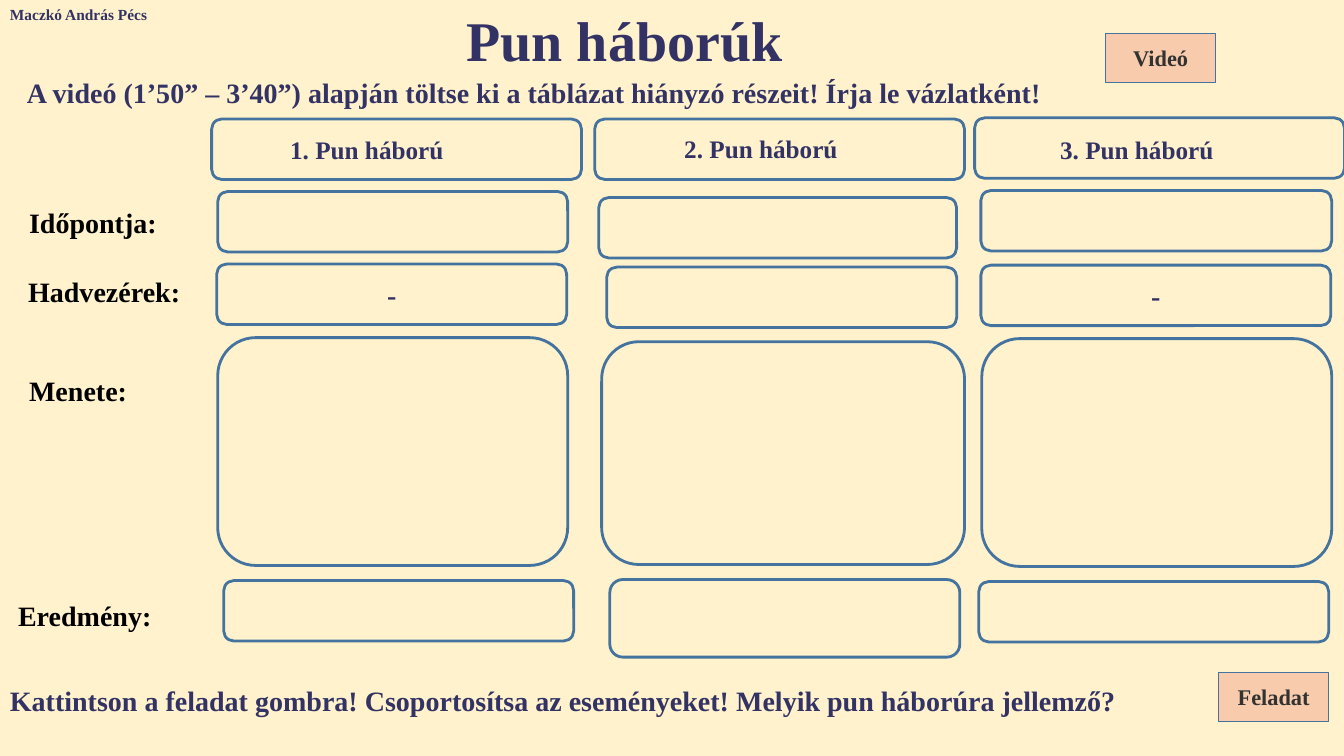
from pptx import Presentation
from pptx.dml.color import RGBColor
from pptx.enum import shapes, text
from pptx.util import Pt

FONT = "Times New Roman"
CREAM = RGBColor(0xFF, 0xF2, 0xCC)
PEACH = RGBColor(0xF8, 0xCB, 0xAD)
BLUE = RGBColor(0x43, 0x73, 0x9E)
NAVY = RGBColor(0x32, 0x32, 0x64)
CHARCOAL = RGBColor(0x32, 0x32, 0x32)
BLACK = RGBColor(0, 0, 0)

# Row labels: text, left, top
ROW_LABELS = [
    ("Időpontja:", 13.7, 143.3),
    ("Hadvezérek:", 13, 192.2),
    ("Menete:", 13.7, 263.5),
    ("Eredmény:", 5.8, 424.1),
]

# Wars: column origin, heading offset, then cells (left, top, width, height,
# text) for date, commanders, course and result, relative to the column
WARS = [
    ((151.2, 85), (49, 7.2), [
        (4.3, 51.8, 250, 43.2, ""), (3.6, 103.6, 250, 43.2, "-"),
        (4.3, 156.2, 250, 162.7, ""), (8.6, 329.7, 250, 43.2, "")]),
    ((424.8, 85), (56.9, 6.4), [
        (2.9, 56.1, 255.6, 43.2, ""), (8.6, 105.8, 250, 43.2, ""),
        (5, 159.1, 259.2, 159.1, ""), (10.8, 329, 250, 55.4, "")]),
    ((696.2, 84.2), (54, 8), [
        (4.4, 51.9, 250.6, 43.2, ""), (4.4, 105.2, 250, 43.2, "-"),
        (5.1, 157.7, 250, 162.7, ""), (2.9, 331.2, 250, 43.2, "")]),
]


def write(shape, wording, size, color, align=text.PP_ALIGN.LEFT,
          anchor=text.MSO_ANCHOR.TOP, wrap=True):
    frame = shape.text_frame
    frame.word_wrap = wrap
    frame.auto_size = text.MSO_AUTO_SIZE.NONE
    frame.vertical_anchor = anchor
    paragraph = frame.paragraphs[0]
    paragraph.text = wording
    paragraph.alignment = align
    paragraph.font.name = FONT
    paragraph.font.size = Pt(size)
    paragraph.font.bold = True
    paragraph.font.color.rgb = color


def add_text(slide, box, wording, size, color=NAVY, wrap=True):
    shape = slide.shapes.add_textbox(*map(Pt, box))
    write(shape, wording, size, color, wrap=wrap)


def add_box(slide, kind, box, fill, line_width, wording="", size=20, color=NAVY):
    shape = slide.shapes.add_shape(kind, *map(Pt, box))
    shape.shadow.inherit = False
    shape.fill.solid()
    shape.fill.fore_color.rgb = fill
    shape.line.color.rgb = BLUE
    shape.line.width = Pt(line_width)
    if wording:
        write(shape, wording, size, color, text.PP_ALIGN.CENTER,
              text.MSO_ANCHOR.MIDDLE)


def add_title(slide, box):
    title = slide.shapes.title
    title.left, title.top, title.width, title.height = map(Pt, box)
    write(title, "Pun háborúk", 40, NAVY, text.PP_ALIGN.CENTER)


def add_war(slide, number, origin, heading_offset, cells):
    left, top = origin
    rounded = shapes.MSO_SHAPE.ROUNDED_RECTANGLE
    add_box(slide, rounded, (left, top, 264.2, 43.2), CREAM, 2)
    heading_left, heading_top = heading_offset
    add_text(slide, (left + heading_left, top + heading_top, 125.3, 28.8),
             f"{number}. Pun háború", 18, wrap=False)
    for cell_left, cell_top, width, height, wording in cells:
        add_box(slide, rounded, (left + cell_left, top + cell_top, width, height),
                CREAM, 2, wording)


def add_button(slide, left, top, wording):
    add_box(slide, shapes.MSO_SHAPE.RECTANGLE, (left, top, 78.5, 35.3),
            PEACH, 1, wording, 16, CHARCOAL)


def build_worksheet(presentation):
    slide = presentation.slides.add_slide(presentation.slide_layouts[5])
    slide.background.fill.solid()
    slide.background.fill.fore_color.rgb = CREAM

    # Heading, author and instruction
    add_title(slide, (130.3, 0, 631.4, 55.4))
    add_text(slide, (0, 0, 114.5, 20.9), "Maczkó András Pécs", 11)
    add_text(slide, (12.2, 50.4, 769, 31.7),
             "A videó (1’50” – 3’40”) alapján töltse ki a táblázat hiányzó "
             "részeit! Írja le vázlatként!", 20, wrap=False)

    # Table of the three wars
    for wording, left, top in ROW_LABELS:
        add_text(slide, (left, top, 126.7, 31.7), wording, 20, BLACK)
    for number, (origin, heading_offset, cells) in enumerate(WARS, 1):
        add_war(slide, number, origin, heading_offset, cells)

    # Closing task and buttons
    add_text(slide, (0, 484.6, 835.2, 31.7),
             "Kattintson a feladat gombra! Csoportosítsa az eseményeket! "
             "Melyik pun háborúra jellemző?", 20, wrap=False)
    add_button(slide, 789.8, 23.8, "Videó")
    add_button(slide, 870.5, 480.2, "Feladat")


def main():
    presentation = Presentation()
    presentation.slide_width = Pt(960)
    presentation.slide_height = Pt(540)
    build_worksheet(presentation)
    presentation.save("out.pptx")


if __name__ == "__main__":
    main()
